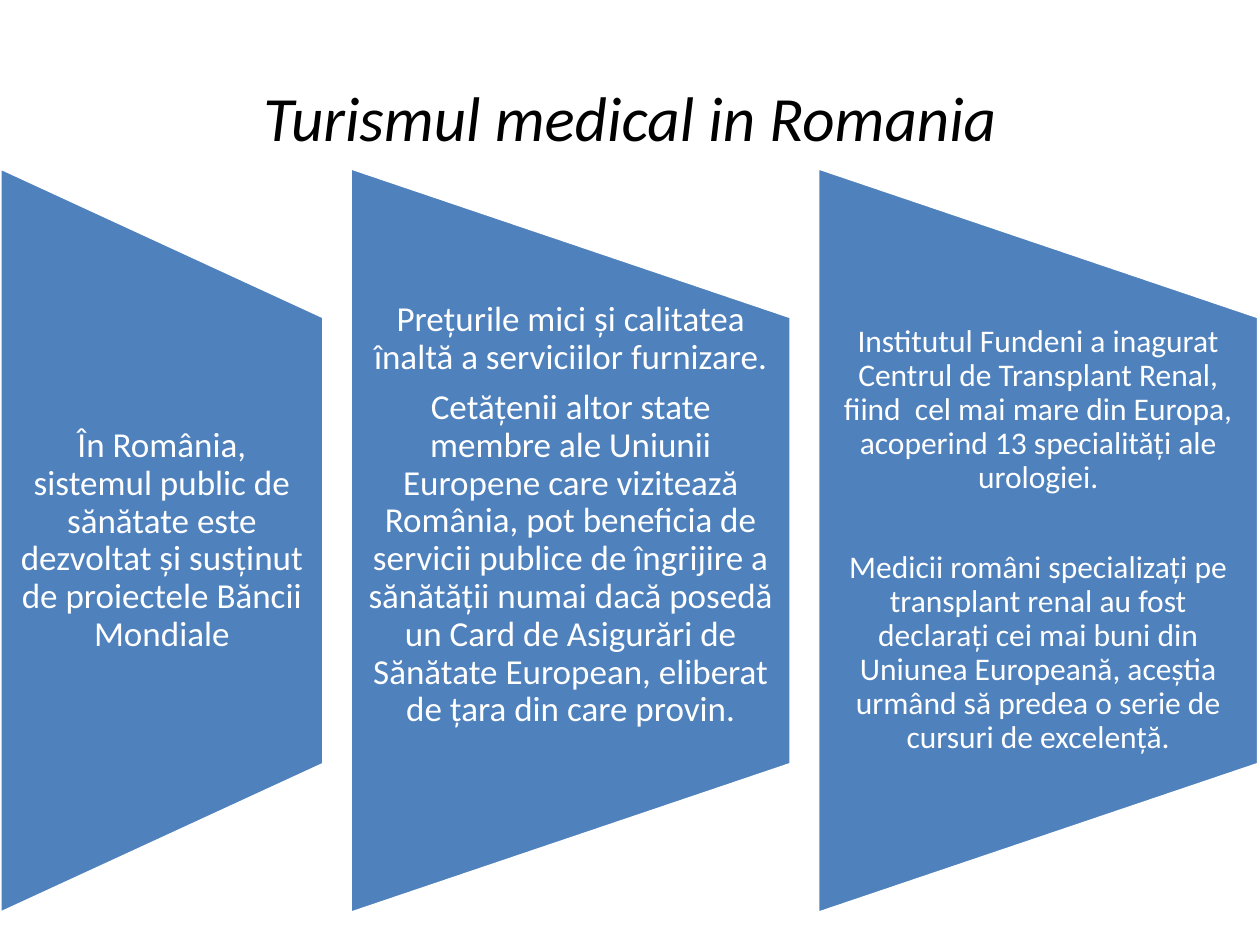
"""Build the slide on medical tourism in Romania with three trapezoid panels."""
import pptx
import pptx.dml.color
import pptx.enum.shapes
import pptx.enum.text
import pptx.util

Inches, Pt = pptx.util.Inches, pptx.util.Pt
CENTER = pptx.enum.text.PP_ALIGN.CENTER
MIDDLE = pptx.enum.text.MSO_ANCHOR.MIDDLE


def color(value):
    """Turn a hex string into a colour."""
    return pptx.dml.color.RGBColor.from_string(value)


def write(p, text, size, rgb, italic=False):
    """Put one formatted, centred run in a paragraph."""
    p.alignment = CENTER
    r = p.add_run()
    r.text = text
    for name, value in {"name": "Calibri", "size": Pt(size), "italic": italic}.items():
        setattr(r.font, name, value)
    r.font.color.rgb = color(rgb)


prs = pptx.Presentation()
prs.slide_width, prs.slide_height = Inches(10), Inches(7.5)
s = prs.slides.add_slide(prs.slide_layouts[5])

title = s.shapes.title
title.left, title.top, title.width, title.height = map(Inches, (0.5, 0.3, 9, 1.25))
title.text_frame.vertical_anchor = MIDDLE
write(title.text_frame.paragraphs[0], "Turismul medical in Romania", 36, "000000", True)

panels = [
    {"width": 2.57, "size": 20, "inset": 0.14, "bottom": 0, "gap": 0, "texts": [
        "În România, sistemul public de sănătate este dezvoltat și susținut de "
        "proiectele Băncii Mondiale"]},
    {"width": 3.5, "size": 20, "inset": 0.14, "bottom": 0.4, "gap": 7, "texts": [
        "Prețurile mici și calitatea înaltă a serviciilor furnizare.",
        "Cetățenii altor state membre ale Uniunii Europene care vizitează România, "
        "pot beneficia de servicii publice de îngrijire a sănătății numai dacă posedă "
        "un Card de Asigurări de Sănătate European, eliberat de țara din care provin."]},
    {"width": 3.5, "size": 18, "inset": 0.12, "bottom": 0, "gap": 32, "texts": [
        "Institutul Fundeni a inagurat Centrul de Transplant Renal, fiind  cel mai mare "
        "din Europa, acoperind 13 specialități ale urologiei.",
        "Medicii români specializați pe transplant renal au fost declarați cei mai buni "
        "din Uniunea Europeană, aceștia urmând să predea o serie de cursuri de excelență."]},
]
length, middle, spacing, text_height = 5.92, 4.29, 0.21, 3.55
left = 0
for panel in panels:
    width = panel["width"]
    sp = s.shapes.add_shape(
        pptx.enum.shapes.MSO_SHAPE.FLOWCHART_MANUAL_OPERATION,
        Inches(left + (width - length) / 2), Inches(middle - width / 2),
        Inches(length), Inches(width))
    sp.rotation = 270
    sp.shadow.inherit = False
    sp.fill.solid()
    sp.fill.fore_color.rgb = color("4F81BD")
    sp.line.color.rgb = color("FFFFFF")
    sp.line.width = Pt(2)

    box = s.shapes.add_textbox(Inches(left), Inches(middle - text_height / 2),
                               Inches(width), Inches(text_height))
    tf = box.text_frame
    frame = {"word_wrap": True, "vertical_anchor": MIDDLE,
             "margin_left": Inches(panel["inset"]), "margin_right": Inches(panel["inset"]),
             "margin_top": 0, "margin_bottom": Inches(panel["bottom"])}
    for name, value in frame.items():
        setattr(tf, name, value)
    for i, text in enumerate(panel["texts"]):
        p = tf.add_paragraph() if i else tf.paragraphs[0]
        p.line_spacing = 0.9
        if i:
            p.space_before = Pt(panel["gap"])
        write(p, text, panel["size"], "FFFFFF")
    left += width + spacing

prs.save("out.pptx")
